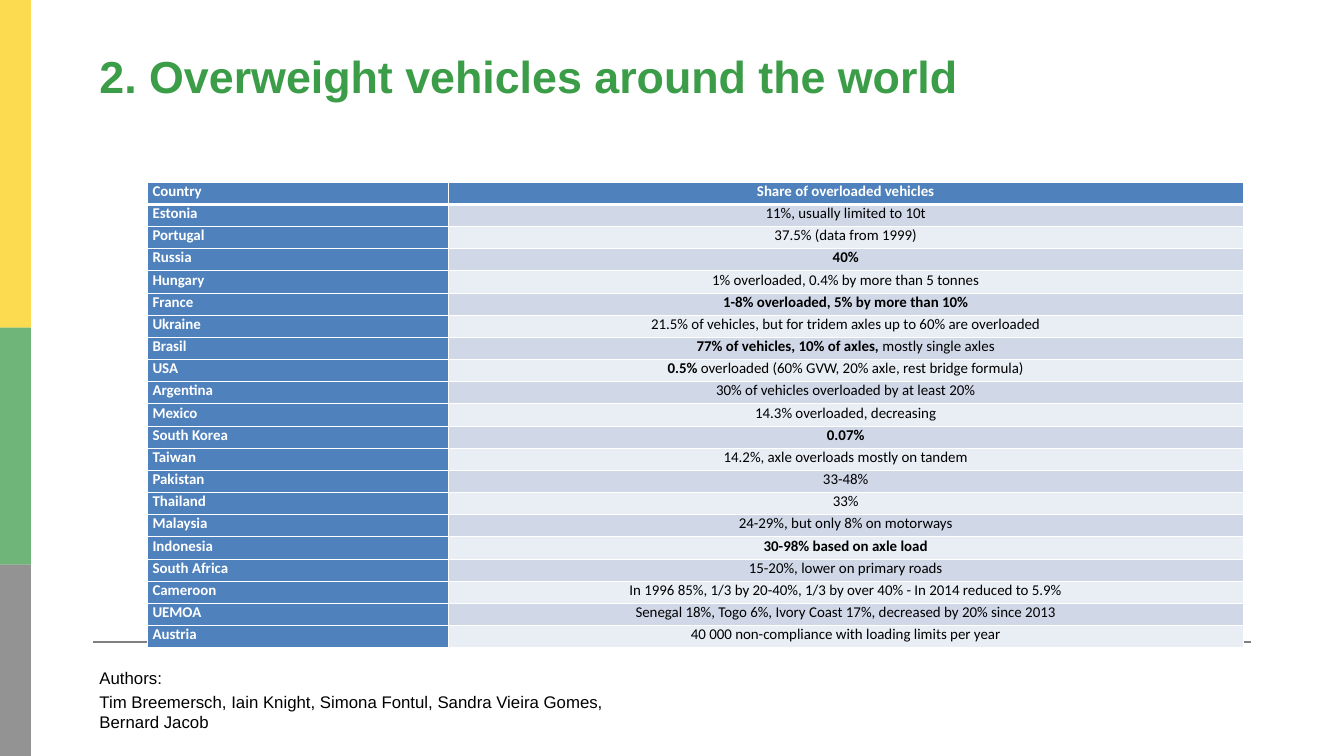
from lxml.etree import SubElement
from pptx import Presentation
from pptx.dml.color import RGBColor
from pptx.enum.shapes import MSO_CONNECTOR, MSO_SHAPE
from pptx.enum.text import MSO_ANCHOR, MSO_AUTO_SIZE, PP_ALIGN
from pptx.oxml import parse_xml
from pptx.oxml.ns import nsdecls, qn
from pptx.util import Inches, Pt

YELLOW = RGBColor(0xFB, 0xCF, 0x16)
GREEN = RGBColor(0x40, 0x9C, 0x4B)
GREY = RGBColor(0x70, 0x70, 0x70)
RULE_GREY = RGBColor(0x80, 0x80, 0x80)
TITLE_GREEN = RGBColor(0x3B, 0x9D, 0x48)
BLUE = RGBColor(0x4F, 0x81, 0xBD)
BAND_DARK = RGBColor(0xD0, 0xD8, 0xE8)
BAND_LIGHT = RGBColor(0xE9, 0xED, 0xF4)
WHITE = RGBColor(0xFF, 0xFF, 0xFF)
BLACK = RGBColor(0x00, 0x00, 0x00)

SLIDE_W, SLIDE_H = Inches(20), Inches(11.25)

# Boxes: left, top, width, height in percent of the slide
SIDEBAR_BOX = (0, 0, 2.3, 100)
RULE_BOX = (6.9, 84.98, 86.2, 0)
TABLE_BOX = (11, 24.09, 81.5, 61.6)
TITLE_BOX = (6.9, 5.33, 68.3, 17.33)
AUTHORS_BOX = (6.9, 87.91, 43.1, 9.69)

SIDEBAR_BANDS = [(YELLOW, 0.43), (GREEN, 0.31), (GREY, 0.25)]
BAND_EDGES = [0, 0.4335, 0.747, 1]

HEADER = ("Country", "Share of overloaded vehicles")
# Country, bold part, plain part
OVERLOADS = [
    ("Estonia", "", "11%, usually limited to 10t"),
    ("Portugal", "", "37.5% (data from 1999)"),
    ("Russia", "40%", ""),
    ("Hungary", "", "1% overloaded, 0.4% by more than 5 tonnes"),
    ("France", "1-8% overloaded, 5% by more than 10%", ""),
    ("Ukraine", "", "21.5% of vehicles, but for tridem axles up to 60% are overloaded"),
    ("Brasil", "77% of vehicles, 10% of axles, ", "mostly single axles"),
    ("USA", "0.5% ", "overloaded (60% GVW, 20% axle, rest bridge formula)"),
    ("Argentina", "", "30% of vehicles overloaded by at least 20%"),
    ("Mexico", "", "14.3% overloaded, decreasing"),
    ("South Korea", "0.07%", ""),
    ("Taiwan", "", "14.2%, axle overloads mostly on tandem"),
    ("Pakistan", "", "33-48%"),
    ("Thailand", "", "33%"),
    ("Malaysia", "", "24-29%, but only 8% on motorways"),
    ("Indonesia", "30-98% based on axle load", ""),
    ("South Africa", "", "15-20%, lower on primary roads"),
    ("Cameroon", "", "In 1996 85%, 1/3 by 20-40%, 1/3 by over 40% - In 2014 reduced to 5.9%"),
    ("UEMOA", "", "Senegal 18%, Togo 6%, Ivory Coast 17%, decreased by 20% since 2013"),
    ("Austria", "", "40 000 non-compliance with loading limits per year"),
]
AUTHORS = [
    "Authors:",
    "Tim Breemersch, Iain Knight, Simona Fontul, Sandra Vieira Gomes, Bernard Jacob",
]


def area(box):
    """Turn a percent box into slide lengths."""
    sizes = (SLIDE_W, SLIDE_H, SLIDE_W, SLIDE_H)
    return [int(size * share / 100) for size, share in zip(sizes, box)]


def set_all(obj, values):
    for name, value in values.items():
        setattr(obj, name, value)


def add_run(p, text, color, **font):
    r = p.add_run()
    r.text = text
    set_all(r.font, font)
    r.font.color.rgb = color


def add_sidebar(s, box):
    x, y, w, h = area(box)
    for (color, _), start, end in zip(SIDEBAR_BANDS, BAND_EDGES, BAND_EDGES[1:]):
        sp = s.shapes.add_shape(MSO_SHAPE.RECTANGLE, x, y + int(h * start),
                                w, int(h * (end - start)))
        sp.shadow.inherit = False
        sp.line.fill.background()
        sp.fill.solid()
        sp.fill.fore_color.rgb = color
        clr = sp.fill._xPr.find(qn("a:solidFill"))[0]
        SubElement(clr, qn("a:alpha"), val="75000")


def add_rule(s, box):
    x, y, w, h = area(box)
    line = s.shapes.add_connector(MSO_CONNECTOR.STRAIGHT, x, y, x + w, y + h)
    line.line.color.rgb = RULE_GREY
    line.line.width = Pt(2.25)
    SubElement(line._element.spPr, qn("a:effectLst"))


def format_cell(cell, fill, bottom):
    set_all(cell, {"margin_left": Inches(0.07), "margin_right": Inches(0.07),
                   "margin_top": 0, "margin_bottom": 0})
    tcPr = cell._tc.get_or_add_tcPr()
    for side, width in (("L", 1), ("R", 1), ("T", 1), ("B", bottom)):
        tcPr.append(parse_xml(
            f'<a:ln{side} {nsdecls("a")} w="{Pt(width)}"><a:solidFill>'
            f'<a:srgbClr val="{WHITE}"/></a:solidFill></a:ln{side}>'))
    cell.fill.solid()
    cell.fill.fore_color.rgb = fill


def add_overload_table(s, box):
    x, y, w, h = area(box)
    n_rows = len(OVERLOADS) + 1
    table = s.shapes.add_table(n_rows, 2, x, y, w, h).table
    table.columns[0].width = Inches(4.47)
    table.columns[1].width = w - Inches(4.47)
    for row in table.rows:
        row.height = h // n_rows

    font = {"name": "Calibri", "size": Pt(16)}
    for i, (country, strong, plain) in enumerate([(*HEADER, "")] + OVERLOADS):
        name, share = table.cell(i, 0), table.cell(i, 1)
        is_header = i == 0
        band = BLUE if is_header else BAND_DARK if i % 2 else BAND_LIGHT
        bottom = 3 if is_header else 1
        format_cell(name, BLUE, bottom)
        format_cell(share, band, bottom)
        add_run(name.text_frame.paragraphs[0], country, WHITE, bold=True, **font)
        p = share.text_frame.paragraphs[0]
        p.alignment = PP_ALIGN.CENTER
        for text, bold in ((strong, True), (plain, False)):
            if text:
                add_run(p, text, WHITE if is_header else BLACK, bold=bold, **font)


def place_text(sp, box, lines, color, top_inset, **font):
    """Move a placeholder into its box and write unbulleted lines."""
    set_all(sp, dict(zip(("left", "top", "width", "height"), area(box))))
    tf = sp.text_frame
    set_all(tf, {"word_wrap": True, "auto_size": MSO_AUTO_SIZE.NONE,
                 "vertical_anchor": MSO_ANCHOR.TOP,
                 "margin_left": Inches(0.1), "margin_right": Inches(0.1),
                 "margin_top": Inches(top_inset), "margin_bottom": Inches(0.05)})
    for i, text in enumerate(lines):
        p = tf.add_paragraph() if i else tf.paragraphs[0]
        pPr = p._p.get_or_add_pPr()
        pPr.set("marL", "0")
        pPr.set("indent", "0")
        SubElement(pPr, qn("a:buNone"))
        set_all(p, {"alignment": PP_ALIGN.LEFT, "line_spacing": 1.0,
                    "space_before": Pt(3.6 if i else 0)})
        add_run(p, text, color, name="Arial", **font)


def main():
    prs = Presentation()
    prs.slide_width, prs.slide_height = SLIDE_W, SLIDE_H
    s = prs.slides.add_slide(prs.slide_layouts[1])

    # Frame of the slide
    add_sidebar(s, SIDEBAR_BOX)
    add_rule(s, RULE_BOX)

    # Content
    add_overload_table(s, TABLE_BOX)
    place_text(s.shapes.title, TITLE_BOX, ["2. Overweight vehicles around the world"],
               TITLE_GREEN, 0.13, size=Pt(48), bold=True)
    place_text(s.placeholders[1], AUTHORS_BOX, AUTHORS, BLACK, 0.05, size=Pt(18))

    prs.save("out.pptx")


if __name__ == "__main__":
    main()
